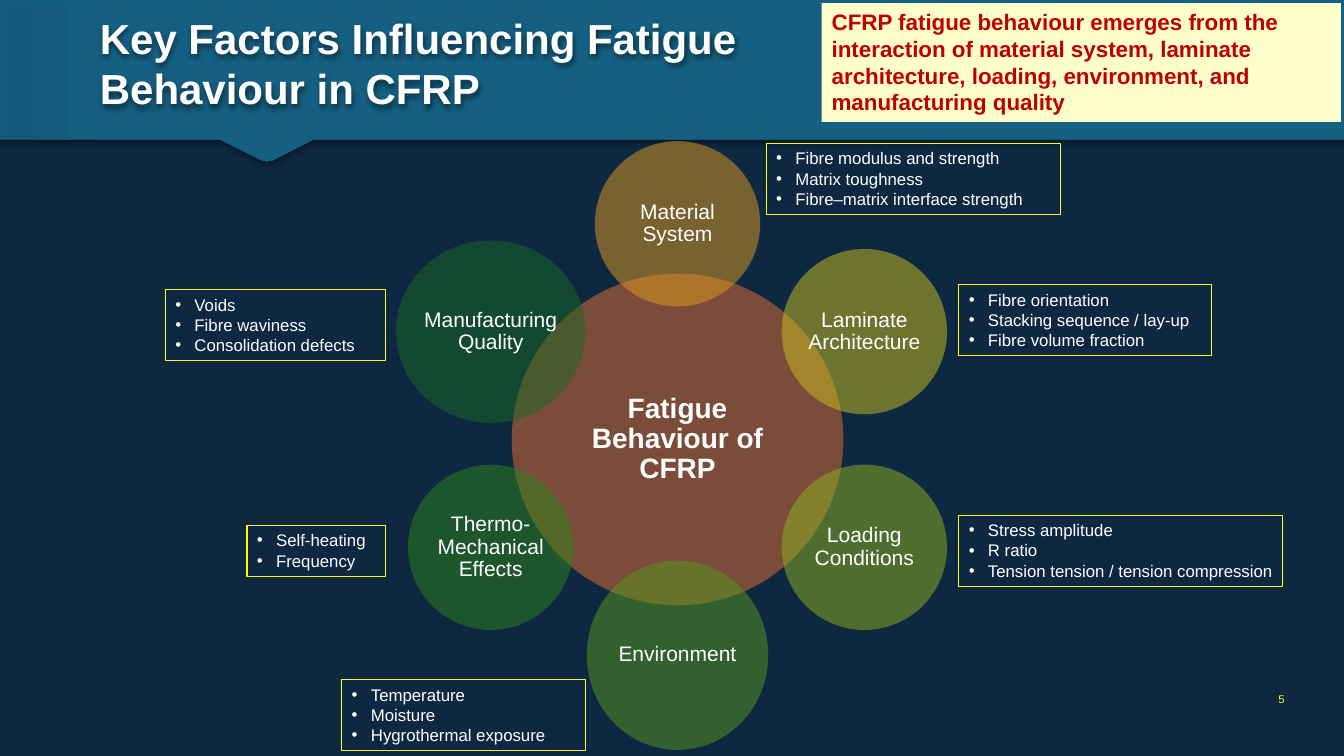
from dataclasses import dataclass
from math import cos, radians, sin

from lxml import etree
from pptx import Presentation
from pptx import util as u
from pptx.dml.color import RGBColor
from pptx.enum import shapes, text
from pptx.oxml import parse_xml
from pptx.oxml.ns import nsdecls, qn


@dataclass(frozen=True)
class Theme:
    font: str = "Arial"
    back: str = "0E2841"
    band: str = "156082"
    edge: str = "145979"
    head: str = "FEFEFE"
    white: str = "FFFFFF"
    rule: str = "FFFF00"
    note: str = "FFFFCC"
    alert: str = "C00000"
    core: str = "E97132"
    title: int = 30
    hub: int = 20
    key: int = 16
    node: int = 15
    item: int = 12
    page: int = 8


T = Theme()
PX = 9144
WIDE, HIGH = 1333, 750
TITLE = "Key Factors Influencing Fatigue Behaviour in CFRP"
CLAIM = ("CFRP fatigue behaviour emerges from the interaction of material system, "
         "laminate architecture, loading, environment, and manufacturing quality")
CORE = "Fatigue Behaviour of CFRP"
MID, ORBIT, HUB = (672, 436), 214, 329
NODES = [
    ("Material System", "E39D1F", (164, 164), 2),
    ("Laminate Architecture", "CBC11E", (164, 164), 2),
    ("Loading Conditions", "8EB21E", (164, 164), 2),
    ("Environment", "56991D", (180, 188), 2),
    ("Thermo-Mechanical Effects", "2C821B", (164, 164), 2),
    ("Manufacturing Quality", "196B24", (188, 181), 0),
]
LISTS = [
    ((164, 287, 218), ["Voids", "Fibre waviness", "Consolidation defects"]),
    ((245, 521, 137), ["Self-heating", "Frequency"]),
    ((339, 674, 242), ["Temperature", "Moisture", "Hygrothermal exposure"]),
    ((951, 511, 321), ["Stress amplitude", "R ratio", "Tension tension / tension compression"]),
    ((951, 282, 251), ["Fibre orientation", "Stacking sequence / lay-up", "Fibre volume fraction"]),
    ((760, 142, 292), ["Fibre modulus and strength", "Matrix toughness",
                       "Fibre–matrix interface strength"]),
]
BAND = [(0, 0), (0, 138), (218, 138), (260, 159), (262, 159), (265, 160),
        (267, 159), (270, 159), (311, 138), (WIDE, 138)]


def px(*nums):
    return [round(n * PX) for n in nums]


def rgb(hue):
    return RGBColor.from_string(hue)


def style(para, size, hue, bold=False):
    for run in para.runs:
        font = run.font
        font.name, font.size, font.bold = T.font, u.Pt(size), bold
        font.color.rgb = rgb(hue)


def shadow(blur, dist, alpha):
    return parse_xml(
        f'<a:effectLst {nsdecls("a")}><a:outerShdw blurRad="{u.Pt(blur)}" '
        f'dist="{u.Pt(dist)}" dir="5400000"><a:srgbClr val="000000">'
        f'<a:alpha val="{alpha * 1000}"/></a:srgbClr></a:outerShdw></a:effectLst>')


def draw(kind, box, fill=None, line=None):
    form = slide.shapes.add_shape(kind, *px(*box))
    form.shadow.inherit = False
    if fill:
        form.fill.solid()
        form.fill.fore_color.rgb = rgb(fill)
    else:
        form.fill.background()
    if line:
        form.line.color.rgb = rgb(line)
        form.line.width = u.Pt(0.75)
    else:
        form.line.fill.background()
    form.text_frame.word_wrap = True
    return form


def disc(label, hue, mid, size, pad, points, bold=False):
    (x, y), (w, h) = mid, size
    form = draw(shapes.MSO_SHAPE.OVAL, (x - w / 2, y - h / 2, w, h), hue)
    tint = form.fill._xPr.find(qn("a:solidFill"))[0]
    etree.SubElement(tint, qn("a:alpha")).set("val", "50000")
    frame = form.text_frame
    frame.margin_left = frame.margin_right = px(pad)[0]
    frame.margin_top = frame.margin_bottom = px(2)[0]
    frame.vertical_anchor = text.MSO_ANCHOR.MIDDLE
    frame.text = label
    para = frame.paragraphs[0]
    para.alignment, para.line_spacing = text.PP_ALIGN.CENTER, 0.9
    style(para, points, T.white, bold)


def bullets(box, items):
    x, y, w = box
    form = draw(shapes.MSO_SHAPE.RECTANGLE, (x, y, w, 10 + 20 * len(items) + 1), line=T.rule)
    frame = form.text_frame
    frame.margin_right = px(2)[0]
    frame.vertical_anchor = text.MSO_ANCHOR.TOP
    frame.text = "\n".join(items)
    for para in frame.paragraphs:
        para.alignment = text.PP_ALIGN.LEFT
        props = para._p.get_or_add_pPr()
        props.set("marL", str(px(19)[0]))
        props.set("indent", str(px(-19)[0]))
        etree.SubElement(props, qn("a:buFont")).set("typeface", T.font)
        etree.SubElement(props, qn("a:buChar")).set("char", "•")
        style(para, T.item, T.white)


def banner():
    path = slide.shapes.build_freeform(WIDE, 0, scale=PX)
    path.add_line_segments(BAND, close=True)
    form = path.convert_to_shape()
    form.shadow.inherit = False
    form.fill.solid()
    form.line.color.rgb = rgb(T.band)
    form.line.width = u.Pt(0.79)
    props = form._element.spPr
    stops = "".join(f'<a:gs pos="{at}000"><a:srgbClr val="{hue}"/></a:gs>'
                    for at, hue in [(0, T.edge), (10, T.band), (100, T.band)])
    props.replace(props.find(qn("a:solidFill")), parse_xml(
        f'<a:gradFill {nsdecls("a")}><a:gsLst>{stops}</a:gsLst>'
        '<a:lin ang="0" scaled="0"/></a:gradFill>'))
    props.replace(props.find(qn("a:effectLst")), shadow(3, 1.4, 40))


def heading():
    title = slide.shapes.title
    title.left, title.top, title.width, title.height = px(89, 18, 726, 88)
    slide.shapes._spTree.append(title._element)
    title._element.spPr.append(shadow(4, 2, 50))
    frame = title.text_frame
    frame.text = TITLE
    frame.word_wrap = True
    frame.vertical_anchor = text.MSO_ANCHOR.MIDDLE
    para = frame.paragraphs[0]
    para.alignment = text.PP_ALIGN.LEFT
    style(para, T.title, T.head, True)


def number():
    frame = slide.shapes.add_textbox(*px(1168, 647, 116, 54)).text_frame
    frame.word_wrap = True
    frame.margin_bottom = px(1)[0]
    frame.vertical_anchor = text.MSO_ANCHOR.BOTTOM
    frame.text = "5"
    frame.paragraphs[0].alignment = text.PP_ALIGN.RIGHT
    style(frame.paragraphs[0], T.page, T.rule)


def claim():
    frame = draw(shapes.MSO_SHAPE.RECTANGLE, (815, 3, 515, 118), T.note).text_frame
    frame.vertical_anchor = text.MSO_ANCHOR.TOP
    frame.text = CLAIM
    frame.paragraphs[0].alignment = text.PP_ALIGN.LEFT
    style(frame.paragraphs[0], T.key, T.alert, True)


deck = Presentation()
deck.slide_width, deck.slide_height = px(WIDE, HIGH)
slide = deck.slides.add_slide(deck.slide_layouts[5])
slide.background.fill.solid()
slide.background.fill.fore_color.rgb = rgb(T.back)
banner()
heading()
number()
disc(CORE, T.core, MID, (HUB, HUB), 3, T.hub, True)
for i, (label, hue, size, pad) in enumerate(NODES):
    turn = radians(360 / len(NODES) * i)
    spot = MID[0] + ORBIT * sin(turn), MID[1] - ORBIT * cos(turn)
    disc(label, hue, spot, size, pad, T.node)
for box, items in LISTS:
    bullets(box, items)
claim()
deck.save("out.pptx")
